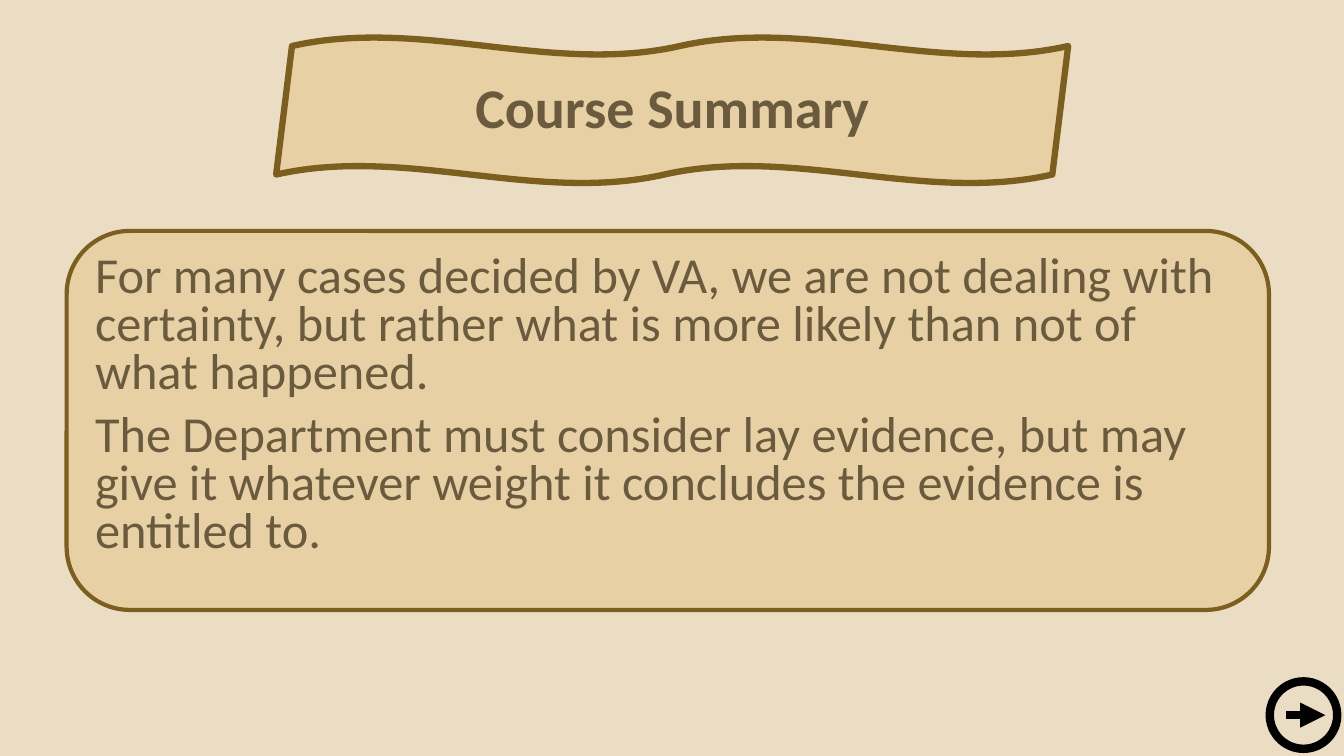
from lxml import etree
from pptx import Presentation
from pptx.dml.color import RGBColor
from pptx.enum.shapes import MSO_CONNECTOR as Link, MSO_SHAPE as Preset
from pptx.enum.text import MSO_ANCHOR as Anchor, PP_ALIGN as Align
from pptx.oxml.ns import qn
from pptx.util import Cm, Pt

SAND = RGBColor(0xEB, 0xDD, 0xC3)
PARCHMENT = RGBColor(0xE7, 0xD0, 0xA4)
BRONZE = RGBColor(0x7C, 0x5F, 0x1E)
UMBER = RGBColor(0x6A, 0x5B, 0x3F)
BLACK = RGBColor(0, 0, 0)

TITLE = "Course Summary"
SUMMARY = [
    "For many cases decided by VA, we are not dealing with certainty, "
    "but rather what is more likely than not of what happened.",
    "The Department must consider lay evidence, but may give it whatever "
    "weight it concludes the evidence is entitled to.",
]


def add_panel(page, preset, left, top, width, height, line_width):
    """Add a parchment panel with a bronze outline."""
    panel = page.shapes.add_shape(preset, Cm(left), Cm(top), Cm(width), Cm(height))
    panel.shadow.inherit = False
    panel.fill.solid()
    panel.fill.fore_color.rgb = PARCHMENT
    panel.line.color.rgb = BRONZE
    panel.line.width = Pt(line_width)
    return panel


def write_text(panel, lines, size, align, anchor, spacing, before=0, bold=False):
    """Fill a panel with evenly formatted paragraphs."""
    frame = panel.text_frame
    frame.word_wrap = True
    frame.vertical_anchor = anchor
    frame.text = "\n".join(lines)
    for para in frame.paragraphs:
        para.alignment = align
        para.line_spacing = spacing
        para.space_before = Pt(before)
        for span in para.runs:
            span.font.name = "Calibri"
            span.font.size = Pt(size)
            span.font.bold = bold
            span.font.color.rgb = UMBER


def add_next_button(page, left, top, size):
    """Add a ringed arrow that points to the right."""
    button = page.shapes.add_group_shape()
    ring = button.shapes.add_shape(Preset.OVAL, Cm(left), Cm(top), Cm(size), Cm(size))
    ring.shadow.inherit = False
    ring.fill.background()
    middle = Cm(top + size / 2)
    arrow = button.shapes.add_connector(
        Link.STRAIGHT, Cm(left + 0.41), middle, Cm(left + 1.4), middle)
    for part in (ring, arrow):
        part.line.color.rgb = BLACK
        part.line.width = Pt(6)
    etree.SubElement(arrow.line._get_or_add_ln(), qn("a:tailEnd"), type="triangle")
    etree.SubElement(arrow._element.spPr, qn("a:effectLst"))


def main():
    """Build the course summary slide."""
    deck = Presentation()
    deck.slide_width, deck.slide_height = Cm(33.87), Cm(19.05)
    page = deck.slides.add_slide(deck.slide_layouts[6])
    page.background.fill.solid()
    page.background.fill.fore_color.rgb = SAND

    body = add_panel(page, Preset.ROUNDED_RECTANGLE, 1.68, 5.82, 30.3, 9.55, 3)
    write_text(body, SUMMARY, 36, Align.LEFT, Anchor.TOP, 0.8, before=10)

    add_next_button(page, 32, 17.17, 1.7)

    banner = add_panel(page, Preset.DOUBLE_WAVE, 6.96, 0.94, 19.96, 3.68, 4.5)
    banner.adjustments[0] = 0.06
    banner.adjustments[1] = -0.01
    write_text(banner, [TITLE], 40, Align.CENTER, Anchor.MIDDLE, 0.9, bold=True)

    deck.save("out.pptx")


if __name__ == "__main__":
    main()
